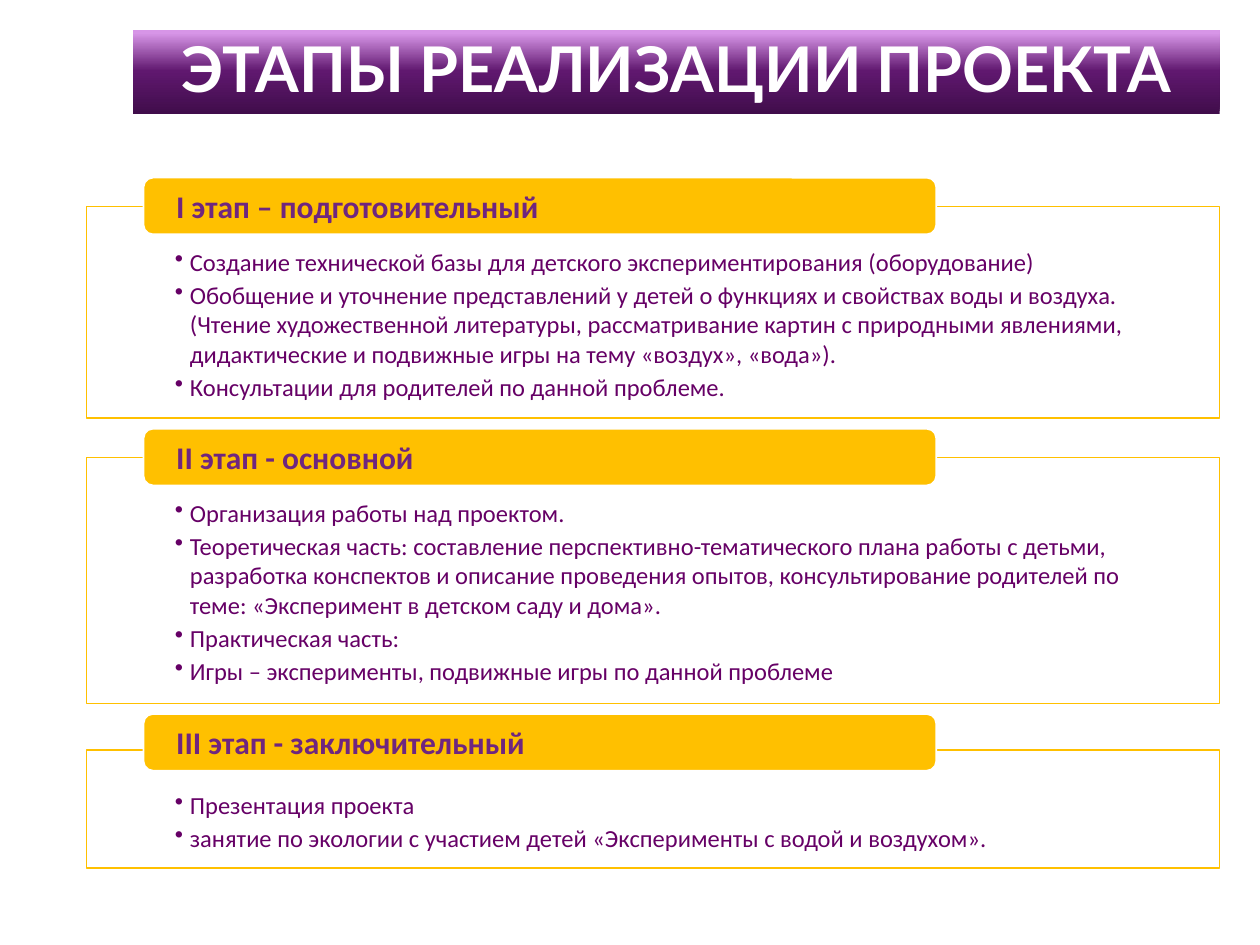
from copy import deepcopy

from lxml.etree import SubElement
from pptx import Presentation
from pptx.dml.color import RGBColor
from pptx.enum.shapes import MSO_SHAPE as Shape
from pptx.enum.text import MSO_ANCHOR as Anchor, MSO_AUTO_SIZE as AutoSize, PP_ALIGN as Align
from pptx.oxml.ns import qn
from pptx.util import Pt

WHITE = RGBColor(0xFF, 0xFF, 0xFF)
GOLD = RGBColor(0xFF, 0xC0, 0x00)
PURPLE = RGBColor(0x6F, 0x26, 0x7F)
PLUM = RGBColor(0x66, 0x00, 0x66)
TITLE_STOPS = [
    (0, RGBColor(0x40, 0x0D, 0x4B)),
    (0.51, RGBColor(0x60, 0x18, 0x6F)),
    (0.96, RGBColor(0xD7, 0x95, 0xE7)),
    (1, RGBColor(0xD7, 0x95, 0xE7)),
]

STAGES = [
    ("I этап – подготовительный", 101.5, 118, 121, [
        "Создание технической базы для детского экспериментирования (оборудование)",
        "Обобщение и уточнение представлений у детей о функциях и свойствах воды и воздуха. "
        "(Чтение художественной литературы, рассматривание картин с природными явлениями, "
        "дидактические и подвижные игры на тему «воздух», «вода»).",
        "Консультации для родителей по данной проблеме.",
    ]),
    ("II этап - основной", 245, 261.5, 140.5, [
        "Организация работы над проектом.",
        "Теоретическая часть: составление перспективно-тематического плана работы с детьми, "
        "разработка конспектов и описание проведения опытов, консультирование родителей по "
        "теме: «Эксперимент в детском саду и дома».",
        "Практическая часть:",
        "Игры – эксперименты, подвижные игры по данной проблеме",
    ]),
    ("III этап - заключительный", 408, 428.5, 67.5, [
        "Презентация проекта",
        "занятие по экологии с участием детей «Эксперименты с водой и воздухом».",
    ]),
]


class StageSlide:
    body_font = "Calibri"
    title_font = "Lato"
    indent = Pt(8.64)

    def __init__(self, deck):
        self.page = deck.slides.add_slide(deck.slide_layouts[5])

    def add_span(self, para, text, font, size, color, bold=False):
        span = para.add_run()
        span.text = text
        span.font.name = font
        span.font.size = Pt(size)
        span.font.bold = bold
        span.font.color.rgb = color

    def title(self, text, left, top, width, height):
        box = self.page.shapes.title
        box.left, box.top, box.width, box.height = map(Pt, (left, top, width, height))
        box.fill.gradient()
        box.fill.gradient_angle = 90
        stop_list = box.element.spPr.find(".//" + qn("a:gsLst"))
        for _ in range(len(TITLE_STOPS) - len(stop_list)):
            stop_list.append(deepcopy(stop_list[0]))
        for stop, (position, color) in zip(box.fill.gradient_stops, TITLE_STOPS):
            stop.position = position
            stop.color.rgb = color
        frame = box.text_frame
        frame.auto_size = AutoSize.NONE
        frame.word_wrap = True
        frame.vertical_anchor = Anchor.MIDDLE
        para = frame.paragraphs[0]
        para.alignment = Align.CENTER
        para.line_spacing = 0.9
        self.add_span(para, text, self.title_font, 36, WHITE, True)

    def block(self, kind, bounds, fill, line, margins, anchor):
        box = self.page.shapes.add_shape(kind, *map(Pt, bounds))
        box.shadow.inherit = False
        box.fill.solid()
        box.fill.fore_color.rgb = fill
        box.line.color.rgb = line
        box.line.width = Pt(1)
        frame = box.text_frame
        frame.word_wrap = True
        frame.vertical_anchor = anchor
        side, frame.margin_top, frame.margin_bottom = map(Pt, margins)
        frame.margin_left = frame.margin_right = side
        return frame

    def panel(self, top, height, items):
        frame = self.block(Shape.RECTANGLE, (49.5, top, 647.5, height), WHITE, GOLD,
                           (50.4, 23, 8), Anchor.TOP)
        for index, item in enumerate(items):
            para = frame.add_paragraph() if index else frame.paragraphs[0]
            para.alignment = Align.LEFT
            para.space_after = Pt(2.1)
            props = para._p.get_or_add_pPr()
            props.set("marL", str(self.indent))
            props.set("indent", str(-self.indent))
            SubElement(props, qn("a:buChar")).set("char", "•")
            self.add_span(para, item, self.body_font, 14, PLUM)

    def header(self, text, top):
        frame = self.block(Shape.ROUNDED_RECTANGLE, (82, top, 453, 32.4), GOLD, WHITE,
                           (17.1, 0, 0), Anchor.MIDDLE)
        para = frame.paragraphs[0]
        para.alignment = Align.LEFT
        self.add_span(para, text, self.body_font, 18, PURPLE, True)


def main():
    deck = Presentation()
    deck.slide_width, deck.slide_height = Pt(720), Pt(540)
    slide = StageSlide(deck)
    slide.title("ЭТАПЫ РЕАЛИЗАЦИИ ПРОЕКТА", 76, 17, 621, 48)
    for name, header_top, panel_top, panel_height, items in STAGES:
        slide.panel(panel_top, panel_height, items)
        slide.header(name, header_top)
    deck.save("out.pptx")


if __name__ == "__main__":
    main()
